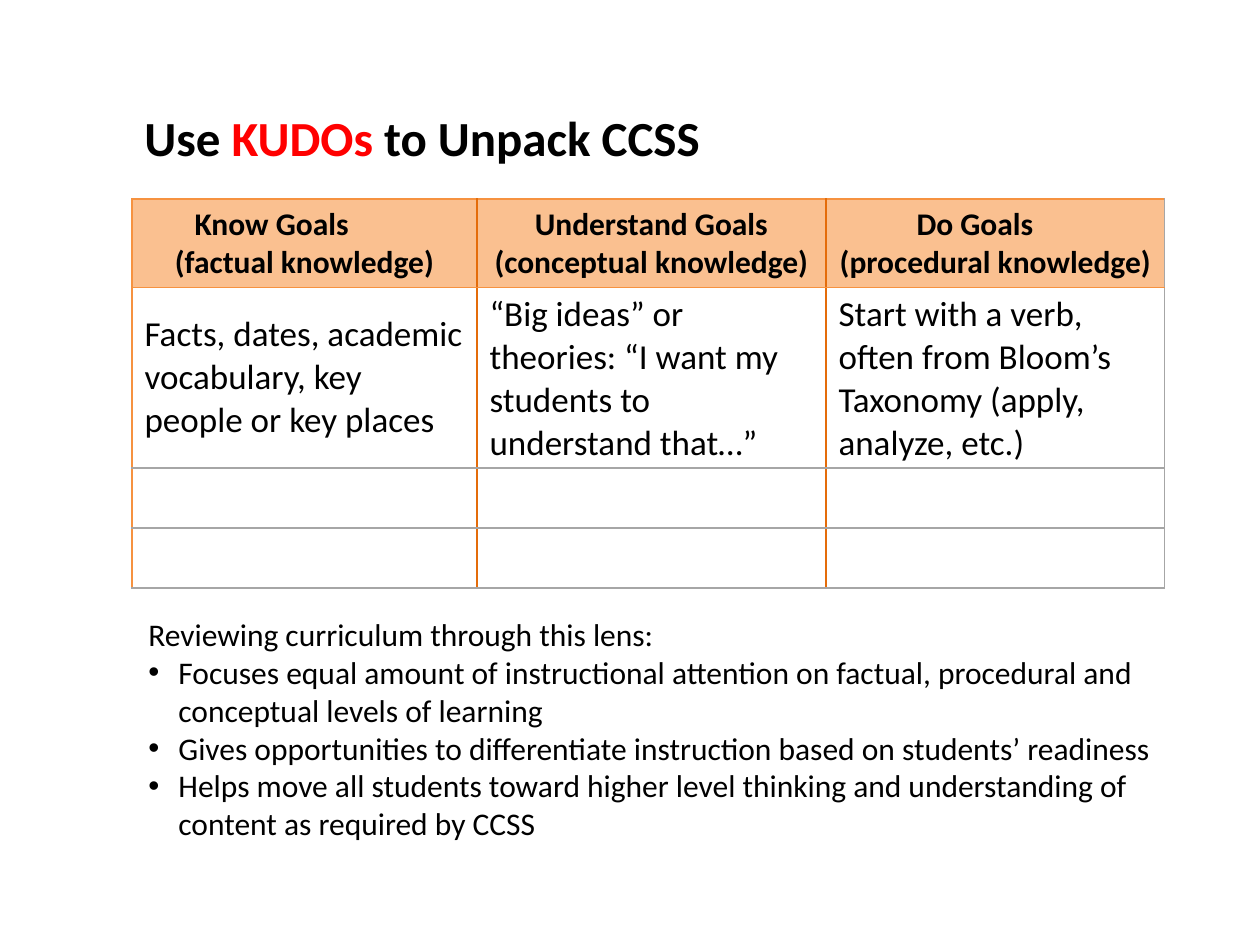
from lxml import etree
from pptx import Presentation
from pptx.dml.color import RGBColor
from pptx.enum.text import MSO_ANCHOR, PP_ALIGN
from pptx.oxml.ns import qn
from pptx.util import Pt

PX = 914400 / 126
FONT = "Calibri"
MIDDLE, LEFT, CENTER = MSO_ANCHOR.MIDDLE, PP_ALIGN.LEFT, PP_ALIGN.CENTER
BLACK, RED, WHITE, PEACH = "000000", "FF0000", "FFFFFF", "FAC090"
ORANGE, DARK_ORANGE, GREY = ("F69240", 0.75), ("E46C0A", 1), ("A6A6A6", 0.75)

TITLE = [("Use ", BLACK), ("KUDOs", RED), (" to Unpack CCSS", BLACK)]
HEADINGS = [
    ("Know Goals", "(factual knowledge)", 50),
    ("Understand Goals", "(conceptual knowledge)", None),
    ("Do Goals", "(procedural knowledge)", 78),
]
EXAMPLES = [
    "Facts, dates, academic vocabulary, key people or key places",
    "“Big ideas” or theories: “I want my students to understand that…”",
    "Start with a verb, often from Bloom’s Taxonomy (apply, analyze, etc.)",
]
COLUMNS = [345, 349, 339]
ROWS = [88, 180, 60, 60]
LENS = "Reviewing curriculum through this lens:"
BENEFITS = [
    "Focuses equal amount of instructional attention on factual, procedural and conceptual levels of learning",
    "Gives opportunities to differentiate instruction based on students’ readiness",
    "Helps move all students toward higher level thinking and understanding of content as required by CCSS",
]


def px(n):
    return round(n * PX)


def rgb(value):
    return RGBColor.from_string(value)


def add_run(p, text, size, color=BLACK, bold=False):
    r = p.add_run()
    r.text = text
    r.font.name = FONT
    r.font.size = Pt(size)
    r.font.bold = bold
    r.font.color.rgb = rgb(color)


def add_text_box(slide, *box):
    tf = slide.shapes.add_textbox(*map(px, box)).text_frame
    tf.word_wrap = True
    return tf


def indent(p, margin, first=0):
    pPr = p._p.get_or_add_pPr()
    pPr.set("marL", str(px(margin)))
    pPr.set("indent", str(px(first)))
    return pPr


def add_bullet(p):
    pPr = indent(p, 30, -30)
    etree.SubElement(pPr, qn("a:buFont"), typeface="Arial")
    etree.SubElement(pPr, qn("a:buChar"), char="•")


def set_borders(cell, **lines):
    tcPr = cell._tc.get_or_add_tcPr()
    for side, (color, width) in lines.items():
        ln = etree.SubElement(tcPr, qn(f"a:ln{side}"), w=str(Pt(width)))
        fill = etree.SubElement(ln, qn("a:solidFill"))
        etree.SubElement(fill, qn("a:srgbClr"), val=color)


def fill_heading(tf, title, detail, offset):
    p = tf.paragraphs[0]
    p.alignment = CENTER
    if offset is not None:
        p.alignment = LEFT
        indent(p, offset)
    add_run(p, title, 18, bold=True)
    p = tf.add_paragraph()
    p.alignment = CENTER
    add_run(p, detail, 18, bold=True)


def add_goal_table(slide):
    table = slide.shapes.add_table(
        len(ROWS), len(COLUMNS), px(132), px(199), px(sum(COLUMNS)), px(sum(ROWS))
    ).table
    table.horz_banding = False
    for column, width in zip(table.columns, COLUMNS):
        column.width = px(width)
    for row, height in zip(table.rows, ROWS):
        row.height = px(height)
    verticals = [ORANGE] + [DARK_ORANGE] * (len(COLUMNS) - 1) + [GREY]
    horizontals = [ORANGE] * 2 + [GREY] * (len(ROWS) - 1)
    for i in range(len(ROWS)):
        for j in range(len(COLUMNS)):
            cell = table.cell(i, j)
            set_borders(cell, L=verticals[j], R=verticals[j + 1],
                        T=horizontals[i], B=horizontals[i + 1])
            cell.fill.solid()
            cell.fill.fore_color.rgb = rgb(WHITE if i else PEACH)
            cell.vertical_anchor = MIDDLE
            if i == 0:
                fill_heading(cell.text_frame, *HEADINGS[j])
            elif i == 1:
                add_run(cell.text_frame.paragraphs[0], EXAMPLES[j], 20)


def main():
    prs = Presentation()
    prs.slide_width, prs.slide_height = px(1260), px(945)
    s = prs.slides.add_slide(prs.slide_layouts[6])

    tf = add_text_box(s, 132, 116, 667, 42)
    tf.vertical_anchor = MIDDLE
    for text, color in TITLE:
        add_run(tf.paragraphs[0], text, 28, color, bold=True)

    add_goal_table(s)

    tf = add_text_box(s, 136, 609, 1029, 296)
    add_run(tf.paragraphs[0], LENS, 18)
    for benefit in BENEFITS:
        p = tf.add_paragraph()
        add_bullet(p)
        add_run(p, benefit, 18)

    prs.save("out.pptx")


if __name__ == "__main__":
    main()
